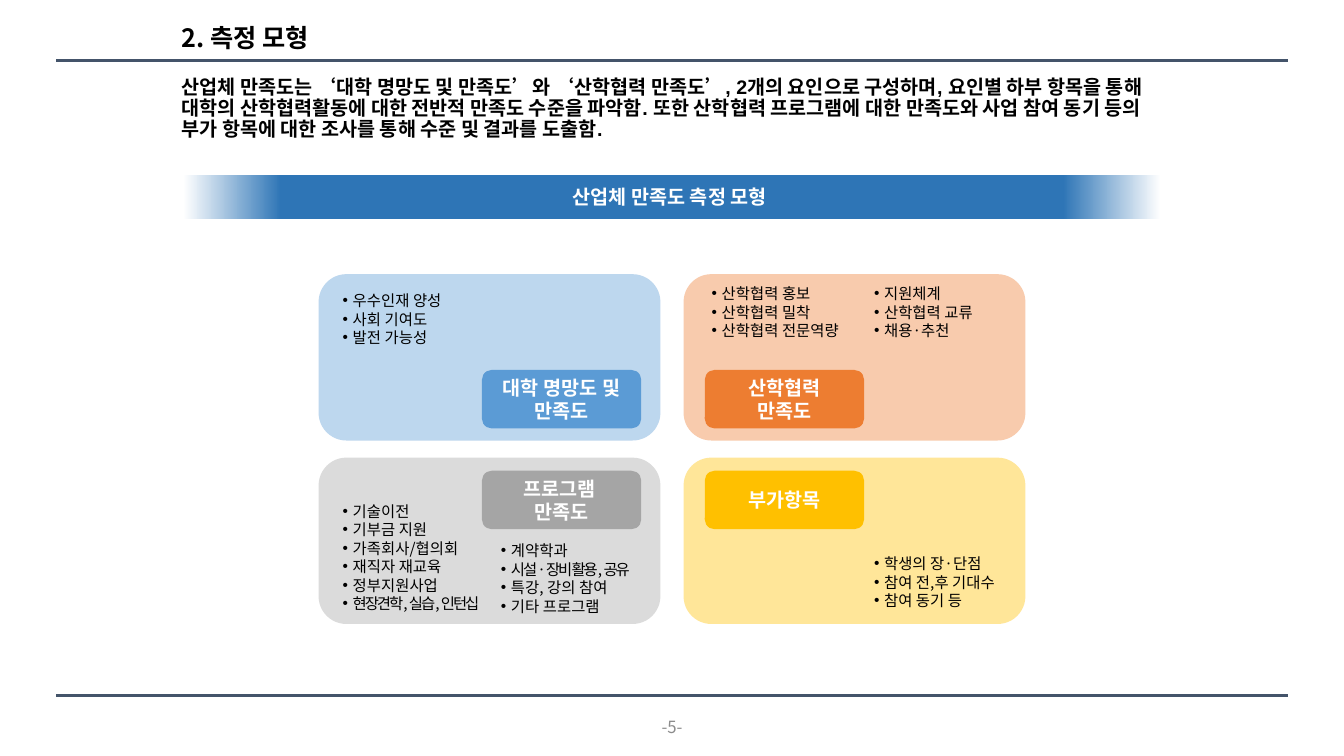
from dataclasses import dataclass

from lxml.etree import SubElement
from pptx import Presentation
from pptx.dml.color import RGBColor
from pptx.enum.shapes import MSO_CONNECTOR, MSO_SHAPE
from pptx.enum.text import MSO_ANCHOR, MSO_AUTO_SIZE, PP_ALIGN
from pptx.oxml import parse_xml
from pptx.oxml.ns import nsdecls, qn
from pptx.util import Inches, Pt

NOTO = "Noto Sans CJK KR"
TIGHT = -150


@dataclass
class Box:
    """Place and size in inches."""
    left: float
    top: float
    width: float
    height: float

    def span(self) -> list:
        """Return the four lengths for python-pptx."""
        return [Inches(n) for n in (self.left, self.top, self.width, self.height)]


@dataclass
class Panel:
    """One quarter of the model with its label."""
    col: int
    row: int
    pale: str
    deep: str
    label: str


@dataclass
class Points:
    """A bulleted list; tight holds the numbers of condensed lines."""
    box: Box
    items: list[str]
    tight: tuple[int, ...] = ()


PANELS = [
    Panel(0, 0, "BDD7EE", "5B9BD5", "대학 명망도 및\n만족도"),
    Panel(1, 0, "F8CBAD", "ED7D31", "산학협력\n만족도"),
    Panel(0, 1, "DBDBDB", "A5A5A5", "프로그램 \v만족도"),
    Panel(1, 1, "FFE699", "FFC000", "부가항목"),
]

LISTS = [
    Points(Box(3.3, 2.84, 1.51, 0.66), ["우수인재 양성", "사회 기여도", "발전 가능성"]),
    Points(Box(6.96, 2.77, 1.71, 0.66),
           ["산학협력 홍보", "산학협력 밀착", "산학협력 전문역량"]),
    Points(Box(8.57, 2.77, 1.51, 0.66), ["지원체계", "산학협력 교류", "채용·추천"]),
    Points(Box(3.3, 4.93, 1.76, 1.21),
           ["기술이전", "기부금 지원", "가족회사/협의회", "재직자 재교육",
            "정부지원사업", "현장견학, 실습, 인턴십"], (5,)),
    Points(Box(4.87, 5.32, 1.64, 0.84),
           ["계약학과", "시설·장비 활용, 공유", "특강, 강의 참여", "기타 프로그램"], (1,)),
    Points(Box(8.57, 5.45, 1.51, 0.66),
           ["학생의 장·단점", "참여 전,후 기대수", "참여 동기 등"]),
]

LEAD = ("산업체 만족도는 ‘대학 명망도 및 만족도’와 ‘산학협력 만족도’, 2개의 요인으로 구성하며, "
        "요인별 하부 항목을 통해 대학의 산학협력활동에 대한 전반적 만족도 수준을 파악함. "
        "또한 산학협력 프로그램에 대한 만족도와 사업 참여 동기 등의 부가 항목에 대한 조사를 통해 "
        "수준 및 결과를 도출함.")


def color(code: str) -> RGBColor:
    """Turn a hex string into a colour."""
    return RGBColor.from_string(code)


def write(shape, text: str, size: float, ink: str, bold: bool = False,
          font: str = NOTO, align=PP_ALIGN.LEFT, anchor=MSO_ANCHOR.MIDDLE,
          wrap: bool = True) -> None:
    """Fill a shape with text and format its runs."""
    frame = shape.text_frame
    frame.text = text
    frame.word_wrap = wrap
    frame.auto_size = MSO_AUTO_SIZE.NONE
    frame.vertical_anchor = anchor
    frame.margin_left = frame.margin_right = Inches(0.1)
    frame.margin_top = frame.margin_bottom = Inches(0.05)
    for para in frame.paragraphs:
        para.alignment = align
        for run in para.runs:
            run.font.size = Pt(size)
            run.font.bold = bold
            run.font.name = font
            run.font.color.rgb = color(ink)
            SubElement(run._r.get_or_add_rPr(), qn("a:ea")).set("typeface", NOTO)


def add_block(slide, kind: MSO_SHAPE, box: Box, fill: str):
    """Add a flat shape without outline."""
    shape = slide.shapes.add_shape(kind, *box.span())
    shape.shadow.inherit = False
    shape.fill.solid()
    shape.fill.fore_color.rgb = color(fill)
    shape.line.fill.background()
    return shape


def add_rule(slide, top: float) -> None:
    """Draw a line across the page."""
    rule = slide.shapes.add_connector(MSO_CONNECTOR.STRAIGHT, Inches(0.56),
                                      Inches(top), Inches(12.77), Inches(top))
    rule.line.color.rgb = color("44546A")
    rule.line.width = Pt(2)
    SubElement(rule._element.spPr, qn("a:effectLst"))


def add_head(slide) -> None:
    """Fill the title and body placeholders."""
    title, body = slide.shapes.title, slide.placeholders[1]
    spots = (Box(1.7, 0.21, 1.6, 0.37), Box(1.7, 0.72, 9.92, 0.74))
    for shape, box in zip((title, body), spots):
        shape.left, shape.top, shape.width, shape.height = box.span()
    write(title, "2. 측정 모형", 18, "000000", bold=True, wrap=False)
    write(body, LEAD, 14, "000000", bold=True, font="Arial", anchor=MSO_ANCHOR.TOP)
    for shape in (title, body):
        para = shape.text_frame.paragraphs[0]
        para.line_spacing = 0.9
        para.space_before = Pt(0)
    para.space_after = Pt(3)
    props = para._p.get_or_add_pPr()
    props.set("marL", "0")
    props.set("indent", "0")
    SubElement(props, qn("a:buNone"))


def add_banner(slide) -> None:
    """Add the band that fades out at both ends."""
    band = add_block(slide, MSO_SHAPE.RECTANGLE, Box(1.82, 1.74, 9.69, 0.43), "2E75B6")
    stops = "".join(
        f'<a:gs pos="{spot * 1000}"><a:srgbClr val="{code}"/></a:gs>'
        for spot, code in ((0, "FFFFFF"), (10, "2E75B6"), (90, "2E75B6"), (100, "FFFFFF")))
    fade = parse_xml(f'<a:gradFill {nsdecls("a")} rotWithShape="1"><a:gsLst>{stops}'
                     '</a:gsLst><a:lin ang="0" scaled="0"/></a:gradFill>')
    props = band._element.spPr
    props.replace(props.find(qn("a:solidFill")), fade)
    write(band, "산업체 만족도 측정 모형 ", 14, "FFFFFF", bold=True, font="Arial",
          align=PP_ALIGN.CENTER)


def add_points(slide, points: Points) -> None:
    """Add a bulleted list."""
    shape = slide.shapes.add_textbox(*points.box.span())
    write(shape, "\n".join(points.items), 11, "000000", anchor=MSO_ANCHOR.TOP)
    for num, para in enumerate(shape.text_frame.paragraphs):
        props = para._p.get_or_add_pPr()
        props.set("marL", str(Inches(0.1)))
        props.set("indent", str(-Inches(0.1)))
        SubElement(props, qn("a:buFont")).set("typeface", "Arial")
        SubElement(props, qn("a:buChar")).set("char", "•")
        if num in points.tight:
            para.runs[0]._r.get_or_add_rPr().set("spc", str(TIGHT))


def main() -> None:
    """Build the slide and save it."""
    deck = Presentation()
    deck.slide_width, deck.slide_height = Inches(13.33), Inches(7.5)
    slide = deck.slides.add_slide(deck.slide_layouts[1])
    for top in (0.6, 6.9):
        add_rule(slide, top)
    add_head(slide)
    page = slide.shapes.add_textbox(*Box(6.39, 7.06, 0.55, 0.3).span())
    write(page, "-5-", 12, "8C8C8C", align=PP_ALIGN.CENTER, wrap=False)
    add_banner(slide)
    for item in PANELS:
        box = Box(3.16 + 3.62 * item.col, 2.72 + 1.82 * item.row, 3.39, 1.65)
        add_block(slide, MSO_SHAPE.ROUNDED_RECTANGLE, box, item.pale)
    for item in PANELS:
        box = Box(4.78 + 2.21 * item.col, 3.67 + item.row, 1.58, 0.58)
        chip = add_block(slide, MSO_SHAPE.ROUNDED_RECTANGLE, box, item.deep)
        write(chip, item.label, 14, "FFFFFF", bold=True, align=PP_ALIGN.CENTER)
    for points in LISTS:
        add_points(slide, points)
    deck.save("out.pptx")


if __name__ == "__main__":
    main()
